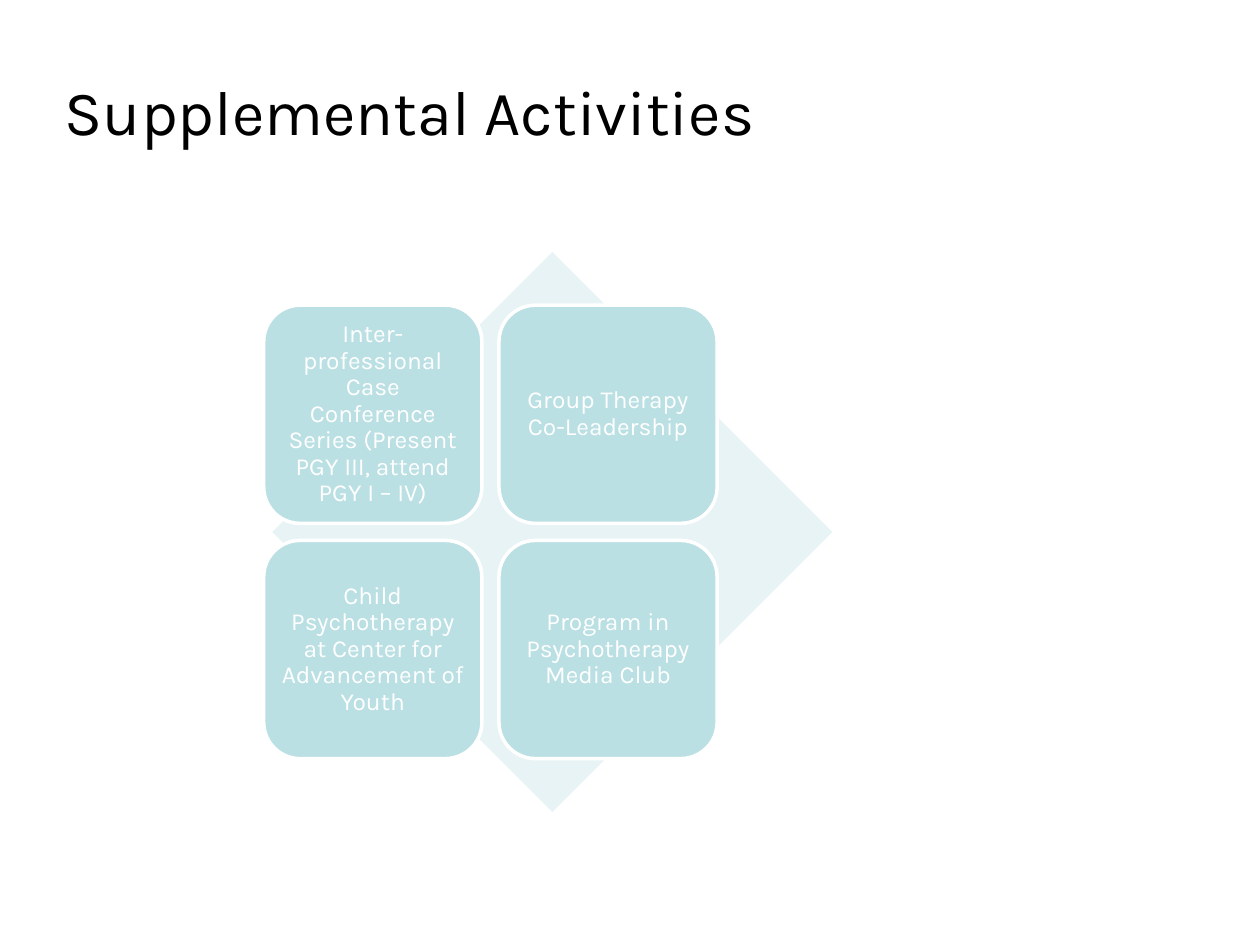
"""Build the Supplemental Activities slide: four activity tiles over a diamond."""
import pptx
import pptx.dml.color
import pptx.enum.shapes
import pptx.enum.text
import pptx.util

Pt = pptx.util.Pt
SHAPES = pptx.enum.shapes.MSO_SHAPE
ALIGN = pptx.enum.text.PP_ALIGN

HEADING = "Supplemental Activities"
ACTIVITIES = [
    "Inter-professional Case Conference Series (Present PGY III, attend PGY I – IV)",
    "Group Therapy Co-Leadership",
    "Child Psychotherapy at Center for Advancement of Youth",
    "Program in Psychotherapy Media Club",
]
COLORS = {"heading": "000000", "diamond": "E7F3F4", "tile": "BBE0E3", "white": "FFFFFF"}
FONT = "Karla"
COLUMNS = 2
TILE_LEFT, TILE_TOP, TILE_SIZE, TILE_PITCH = 150.7, 174.4, 124.7, 134.4
DIAMOND_LEFT, DIAMOND_TOP, DIAMOND_SIZE = 155.6, 144, 320


def color(name):
    return pptx.dml.color.RGBColor.from_string(COLORS[name])


def write(frame, wording, size, color_name, align, inset):
    frame.word_wrap = True
    frame.vertical_anchor = pptx.enum.text.MSO_ANCHOR.MIDDLE
    frame.margin_left = frame.margin_right = Pt(inset[0])
    frame.margin_top = frame.margin_bottom = Pt(inset[1])
    paragraph = frame.paragraphs[0]
    paragraph.alignment = align
    run = paragraph.add_run()
    run.text = wording
    run.font.name = FONT
    run.font.size = Pt(size)
    run.font.color.rgb = color(color_name)
    return paragraph


def add_filled(slide, preset, left, top, size, fill_name):
    shape = slide.shapes.add_shape(preset, Pt(left), Pt(top), Pt(size), Pt(size))
    shape.shadow.inherit = False
    shape.fill.solid()
    shape.fill.fore_color.rgb = color(fill_name)
    return shape


def main():
    deck = pptx.Presentation()
    deck.slide_width, deck.slide_height = Pt(720), Pt(540)
    slide = deck.slides.add_slide(deck.slide_layouts[6])

    heading = slide.shapes.add_textbox(Pt(30), Pt(18), Pt(660), Pt(90))
    write(heading.text_frame, HEADING, 36, "heading", ALIGN.LEFT, (7.2, 3.6))

    diamond = add_filled(slide, SHAPES.DIAMOND, DIAMOND_LEFT, DIAMOND_TOP, DIAMOND_SIZE, "diamond")
    diamond.line.fill.background()

    for index, activity in enumerate(ACTIVITIES):
        row, column = divmod(index, COLUMNS)
        tile = add_filled(
            slide,
            SHAPES.ROUNDED_RECTANGLE,
            TILE_LEFT + column * TILE_PITCH,
            TILE_TOP + row * TILE_PITCH,
            TILE_SIZE,
            "tile",
        )
        tile.line.color.rgb = color("white")
        tile.line.width = Pt(2)
        label = write(tile.text_frame, activity, 14, "white", ALIGN.CENTER, (4.2, 4.2))
        label.line_spacing = 0.9

    deck.save("out.pptx")


if __name__ == "__main__":
    main()
